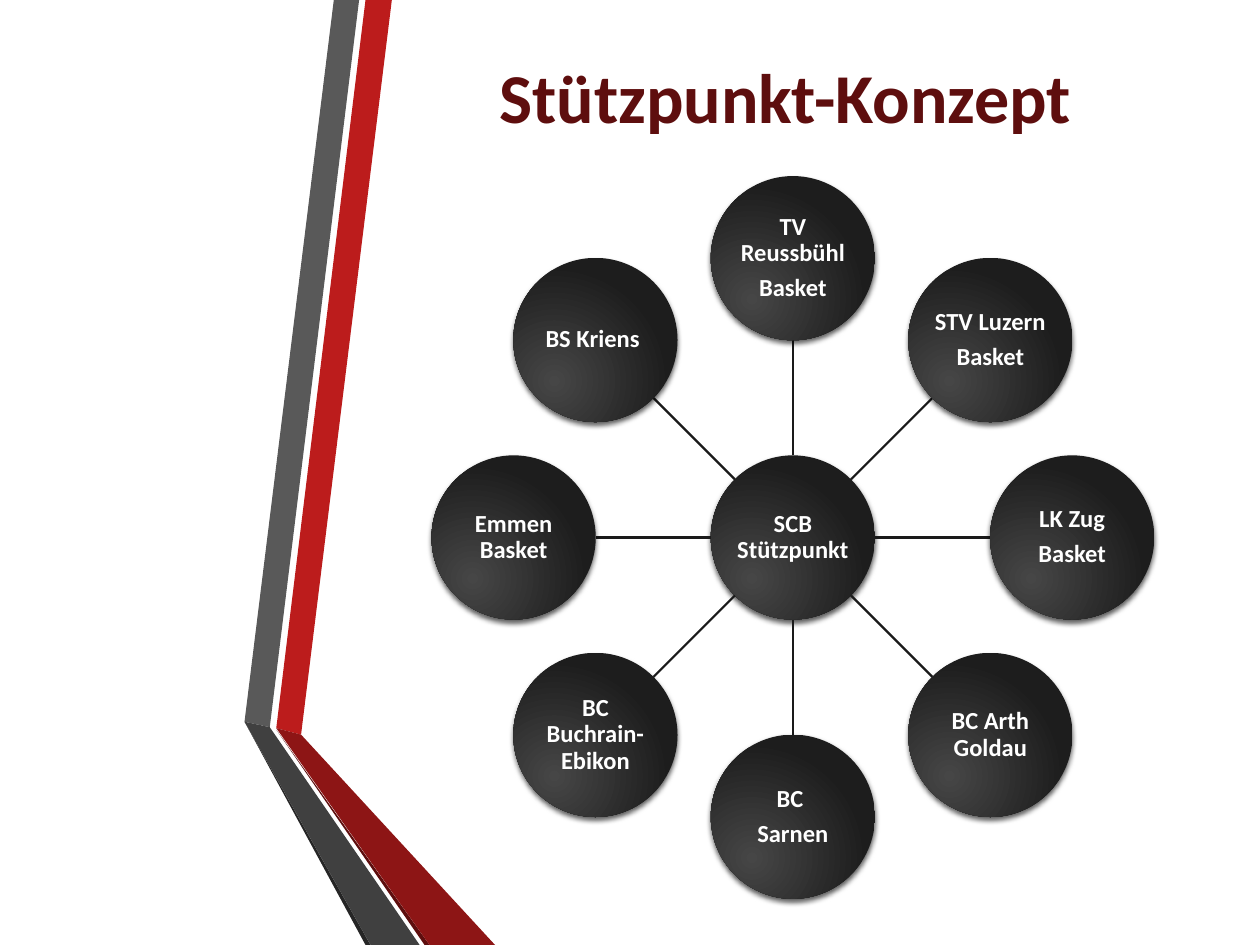
from math import cos, pi, sin

from lxml import etree
from pptx import Presentation
from pptx.dml.color import RGBColor
from pptx.enum.shapes import MSO_CONNECTOR, MSO_SHAPE
from pptx.enum.text import MSO_ANCHOR, PP_ALIGN
from pptx.oxml.ns import qn
from pptx.util import Cm, Pt

STRAIGHT = MSO_CONNECTOR.STRAIGHT
OVAL = MSO_SHAPE.OVAL
MIDDLE = MSO_ANCHOR.MIDDLE
CENTER = PP_ALIGN.CENTER

FONT = "Calibri"
DISC = 3.31  # disc diameter in cm
CLUBS = [  # clockwise from the top, one string per paragraph
    ["TV\vReussbühl", "Basket"],
    ["STV Luzern", "Basket"],
    ["LK Zug", "Basket"],
    ["BC Arth Goldau"],
    ["BC ", "Sarnen"],
    ["BC Buchrain-Ebikon"],
    ["Emmen Basket"],
    ["BS Kriens "],
]
# Ribbon pieces: colour and corners in cm from the ribbon box
RIBBONS = [
    ("BC1C1C", [(0.64, 14.68), (1.14, 14.81), (2.97, 0), (2.44, 0)]),
    ("595959", [(2.31, 0), (1.8, 0), (0, 14.55), (0.51, 14.66)]),
    ("262626", [(0, 14.55), (2.44, 19.05), (2.54, 19.05)]),
    ("5E0E0E", [(0.64, 14.71), (3.63, 19.05), (3.73, 19.05)]),
    ("8D1515", [(0.64, 14.68), (3.73, 19.05), (5.05, 19.05), (1.14, 14.81)]),
    ("404040", [(0, 14.55), (2.54, 19.05), (3.53, 19.05), (0.51, 14.66)]),
]


def color(hex_code):
    return RGBColor.from_string(hex_code)


def write(frame, paragraphs, *, size, ink, inset=None, spacing=None, after=None):
    frame.word_wrap = True
    frame.vertical_anchor = MIDDLE
    if inset is not None:
        frame.margin_left = frame.margin_right = Cm(inset)
        frame.margin_top = frame.margin_bottom = Cm(inset)
    for i, text in enumerate(paragraphs):
        paragraph = frame.add_paragraph() if i else frame.paragraphs[0]
        paragraph.text = text
        paragraph.alignment = CENTER
        paragraph.line_spacing = spacing
        paragraph.space_after = after
        for run in paragraph.runs:
            run.font.name = FONT
            run.font.size = Pt(size)
            run.font.bold = True
            run.font.color.rgb = color(ink)


def style_disc(disc):
    """Radial gradient lit from the lower left, and a soft shadow below."""
    disc.fill.gradient()
    for stop, shade in zip(disc.fill.gradient_stops, ("464646", "1D1D1D")):
        stop.color.rgb = color(shade)
    properties = disc.element.spPr
    gradient = properties.find(qn("a:gradFill"))
    gradient.remove(gradient.find(qn("a:lin")))
    circle = etree.SubElement(gradient, qn("a:path"), path="circle")
    etree.SubElement(circle, qn("a:fillToRect"),
                     l="50000", t="100000", r="100000", b="50000")

    disc.line.fill.background()
    disc.shadow.inherit = False
    effects = properties.find(qn("a:effectLst"))
    shadow = etree.SubElement(effects, qn("a:outerShdw"), blurRad=str(Pt(3)),
                              dist=str(Pt(2)), dir="5400000", rotWithShape="0")
    black = etree.SubElement(shadow, qn("a:srgbClr"), val="000000")
    etree.SubElement(black, qn("a:alpha"), val="64000")


def add_disc(slide, x, y, paragraphs):
    disc = slide.shapes.add_shape(OVAL, Cm(x - DISC / 2), Cm(y - DISC / 2),
                                  Cm(DISC), Cm(DISC))
    style_disc(disc)
    write(disc.text_frame, paragraphs, size=14, ink="FFFFFF",
          inset=0.02, spacing=0.9, after=Pt(5))


def add_spoke(slide, x1, y1, x2, y2):
    spoke = slide.shapes.add_connector(STRAIGHT, Cm(x1), Cm(y1), Cm(x2), Cm(y2))
    spoke.line.color.rgb = color("1A1A1A")
    spoke.line.width = Pt(1.25)
    etree.SubElement(spoke.element.spPr, qn("a:effectLst"))


def add_ribbons(slide, left, top):
    for fill, corners in RIBBONS:
        points = [(Cm(left + x), Cm(top + y)) for x, y in corners]
        builder = slide.shapes.build_freeform(*points[0])
        builder.add_line_segments(points[1:], close=True)
        ribbon = builder.convert_to_shape()
        ribbon.fill.solid()
        ribbon.fill.fore_color.rgb = color(fill)
        ribbon.line.fill.background()
        ribbon.shadow.inherit = False


def add_title(slide, left, top, width, height):
    title = slide.shapes.add_textbox(Cm(left), Cm(top), Cm(width), Cm(height))
    write(title.text_frame, ["Stützpunkt-Konzept "], size=40, ink="5E0E0E")


def add_club_wheel(slide, left, top, size):
    """Hub in the middle of a square box, clubs evenly spaced around it."""
    hub_x, hub_y = left + size / 2, top + size / 2
    orbit = (size - DISC) / 2
    add_disc(slide, hub_x, hub_y, ["SCB Stützpunkt"])
    for i, club in enumerate(CLUBS):
        angle = 2 * pi * i / len(CLUBS)
        start, end, center = [
            (hub_x + r * sin(angle), hub_y - r * cos(angle))
            for r in (DISC / 2, orbit - DISC / 2, orbit)
        ]
        add_spoke(slide, *start, *end)
        add_disc(slide, *center, club)


def main():
    deck = Presentation()
    deck.slide_width, deck.slide_height = Cm(25.4), Cm(19.05)
    slide = deck.slides.add_slide(deck.slide_layouts[6])
    add_ribbons(slide, 4.93, 0)
    add_title(slide, 8.33, 0.43, 15.32, 3)
    add_club_wheel(slide, 8.7, 3.55, 14.57)
    deck.save("out.pptx")


if __name__ == "__main__":
    main()
